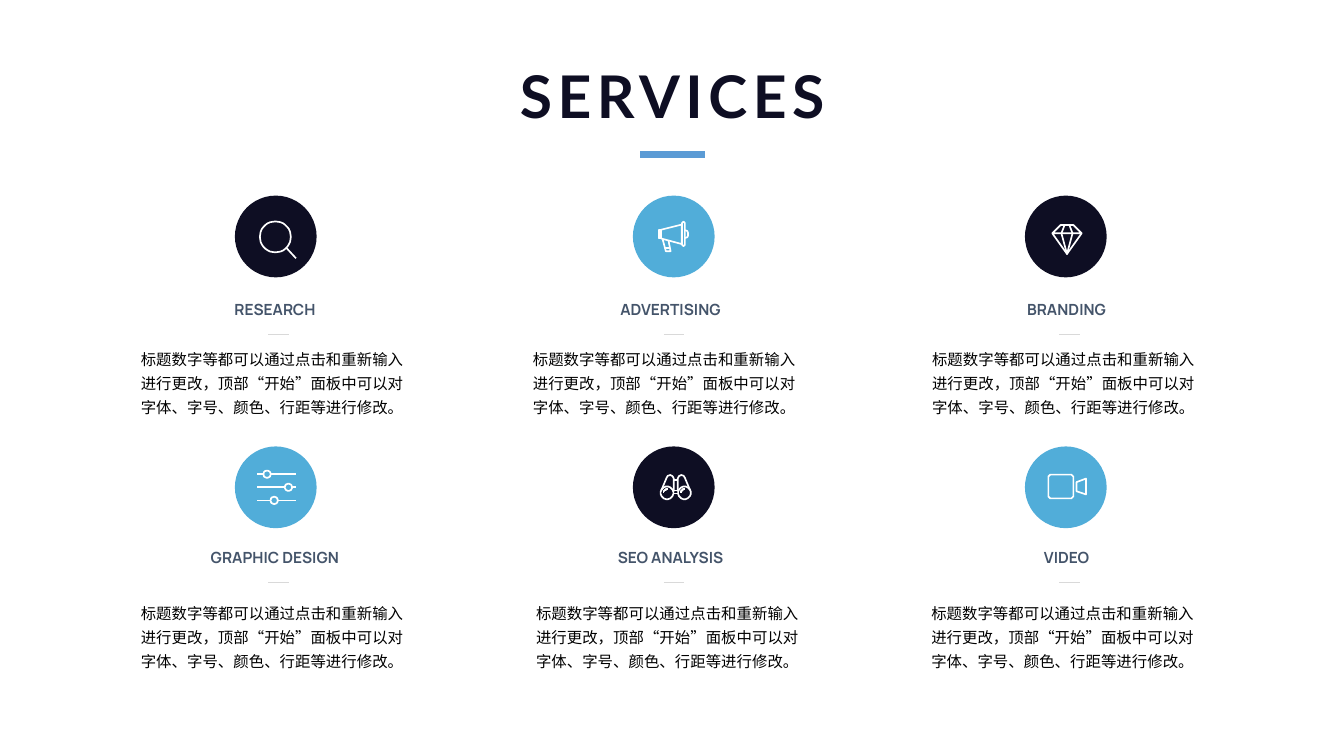
from dataclasses import dataclass
from math import cos, radians, sin

from lxml.etree import SubElement
from pptx import Presentation
from pptx.dml.color import RGBColor as Rgb
from pptx.enum.shapes import MSO_CONNECTOR as Link, MSO_SHAPE as Kind
from pptx.enum.text import MSO_AUTO_SIZE as Fit, PP_ALIGN as Align
from pptx.oxml.ns import qn
from pptx.util import Cm, Pt


@dataclass(frozen=True)
class Theme:
    """Hold the colours, fonts and type sizes of the slide."""
    navy: Rgb = Rgb.from_string("0E0E23")
    sky: Rgb = Rgb.from_string("51ADD9")
    blue: Rgb = Rgb.from_string("5B9BD5")
    slate: Rgb = Rgb.from_string("44546A")
    grey: Rgb = Rgb.from_string("D9D9D9")
    white: Rgb = Rgb.from_string("FFFFFF")
    black: Rgb = Rgb.from_string("000000")
    head: str = "Lato"
    label: str = "Manrope"
    body: str = "Noto Sans CJK SC"
    large: Pt = Pt(42)
    small: Pt = Pt(11)
    stroke: Pt = Pt(1.2)


THEME = Theme()
NOTE = "标题数字等都可以通过点击和重新输入进行更改，顶部“开始”面板中可以对字体、字号、颜色、行距等进行修改。"
DISC = 2.06
DASH = 0.52
DISC_MIDS = (6.95, 16.98, 26.86)
LABEL_MIDS = (6.93, 16.9, 26.88)
DASH_MIDS = (7.02, 16.99, 26.96)
ROWS = (
    {"disc": 4.93, "label": 7.44, "dash": 8.43, "note": 8.56},
    {"disc": 11.25, "label": 13.69, "dash": 14.68, "note": 14.96},
)
ITEMS = (
    (("RESEARCH", 2.69, 3.3, "lens"), ("ADVERTISING", 3.28, 13.18, "horn"),
     ("BRANDING", 2.67, 23.24, "gem")),
    (("GRAPHIC DESIGN", 3.96, 3.3, "sliders"), ("SEO ANALYSIS", 3.38, 13.26, "field"),
     ("VIDEO", 1.8, 23.22, "film")),
)


def apply(target, values):
    """Set each named value on the target."""
    for name, value in values.items():
        setattr(target, name, value)


def arc(x, y, size, start=0, end=360):
    """Return points along an arc, with angles in degrees."""
    turns = [radians(start + (end - start) * step / 36) for step in range(37)]
    return [(x + size * cos(turn), y + size * sin(turn)) for turn in turns]


def box(left, top, right, low, cut=0):
    """Return a closed box with its corners cut by a small length."""
    ends = [(left + cut, top), (right - cut, top), (right, top + cut), (right, low - cut),
            (right - cut, low), (left + cut, low), (left, low - cut), (left, top + cut)]
    return ends + ends[:1]


def sliders():
    """Return the strokes of three sliders with round knobs."""
    paths = []
    for knob, y in ((-22, -33), (32, 0), (-4, 33)):
        paths += [[(-46, y), (knob - 9, y)], arc(knob, y, 9), [(knob + 9, y), (51, y)]]
    return paths


def field():
    """Return the strokes of a pair of field glasses."""
    tube = [(-31, 7), (-18, -24), (-15, -29), (-9, -31), (-3, -28), (0, -22), (0, 10)]
    paths = [tube, [(10 - x, y) for x, y in tube]]
    paths += [[(0, y), (10, y)] for y in (-18, 8, 16)]
    for x in (-17, 27):
        paths += [arc(x, 14, 16), arc(x, 14, 9, 180, 270)]
    return paths


ICONS = {
    "lens": [arc(-1, 1, 39), [(27, 29), (51, 55)]],
    "horn": [
        [(-32, -17), (20, -30), (20, 19), (-32, 5)],
        box(-38, -17, -32, 5), box(21, -37, 28, 24, 3),
        [(28, -16), (34, -14), (36, -9), (36, -2), (34, 2), (28, 4)],
        [(-28, 7), (-20, 37), (-8, 37), (-13, 11)], [(-22, 29), (-10, 29)],
    ],
    "gem": [
        [(-34, -8), (-13, -29), (19, -29), (40, -8), (3, 44), (-34, -8), (40, -8)],
        [(-3, -29), (-11, -8), (3, 44), (17, -8), (9, -29)],
    ],
    "sliders": sliders(),
    "field": field(),
    "film": [
        box(-44, -32, 19, 28, 5),
        [(27, -13), (51, -22), (51, 18), (27, 10), (27, -13)],
    ],
}


def add_text(slide, text, place, font, para, wrap=False, space=0):
    """Add a text box with one styled run."""
    frame = slide.shapes.add_textbox(*map(Cm, place)).text_frame
    apply(frame, {"word_wrap": wrap, "auto_size": Fit.SHAPE_TO_FIT_TEXT})
    line = frame.paragraphs[0]
    apply(line, para)
    run = line.add_run()
    run.text = text
    tint = font["tint"]
    apply(run.font, {name: value for name, value in font.items() if name != "tint"})
    run.font.color.rgb = tint
    props = run._r.get_or_add_rPr()
    SubElement(props, qn("a:ea")).set("typeface", font["name"])
    if space:
        props.set("spc", str(space * 100))


def add_rule(slide, left, top, width, tint, weight):
    """Add a level line with no shadow."""
    rule = slide.shapes.add_connector(Link.STRAIGHT, Cm(left), Cm(top), Cm(left + width), Cm(top))
    rule.line.color.rgb = tint
    rule.line.width = Pt(weight)
    SubElement(rule._element.spPr, qn("a:effectLst"))


def add_disc(slide, left, top, tint):
    """Add a plain filled circle."""
    disc = slide.shapes.add_shape(Kind.OVAL, Cm(left), Cm(top), Cm(DISC), Cm(DISC))
    disc.shadow.inherit = False
    disc.fill.solid()
    disc.fill.fore_color.rgb = tint
    disc.line.fill.background()


def add_icon(slide, paths, x, y):
    """Draw an icon as white strokes around a centre."""
    pen = slide.shapes.build_freeform(*paths[0][0], scale=Cm(0.01))
    for path in paths:
        pen.move_to(*path[0])
        pen.add_line_segments(path[1:], close=path[0] == path[-1])
    icon = pen.convert_to_shape(Cm(x), Cm(y))
    icon.shadow.inherit = False
    icon.fill.background()
    icon.line.color.rgb = THEME.white
    icon.line.width = THEME.stroke


def add_item(slide, item, row, col):
    """Add one service with its disc, icon, label, dash and note."""
    label, width, left, icon = item
    tops, mid = ROWS[row], DISC_MIDS[col]
    add_disc(slide, mid - DISC / 2, tops["disc"], (THEME.navy, THEME.sky)[(row + col) % 2])
    add_icon(slide, ICONS[icon], mid, tops["disc"] + DISC / 2)
    add_text(slide, label, (LABEL_MIDS[col] - width / 2, tops["label"], width, 0.71),
             {"name": THEME.label, "size": THEME.small, "bold": True, "tint": THEME.slate},
             {"alignment": Align.CENTER, "line_spacing": Pt(13.4)})
    add_rule(slide, DASH_MIDS[col] - DASH / 2, tops["dash"], DASH, THEME.grey, 0.5)
    add_text(slide, NOTE, (left, tops["note"], 7.47, 2.08),
             {"name": THEME.body, "size": THEME.small, "tint": THEME.black},
             {"line_spacing": 1.3}, wrap=True)


def main():
    """Build the slide and save it."""
    deck = Presentation()
    apply(deck, {"slide_width": Cm(33.87), "slide_height": Cm(19.05)})
    slide = deck.slides.add_slide(deck.slide_layouts[6])
    add_text(slide, "SERVICES", (12.4, 1.37, 9.09, 2.06),
             {"name": THEME.head, "size": THEME.large, "bold": True, "tint": THEME.navy},
             {"alignment": Align.CENTER}, space=4)
    add_rule(slide, 16.13, 3.89, 1.65, THEME.blue, 4.5)
    for row, items in enumerate(ITEMS):
        for col, item in enumerate(items):
            add_item(slide, item, row, col)
    deck.save("out.pptx")


if __name__ == "__main__":
    main()
